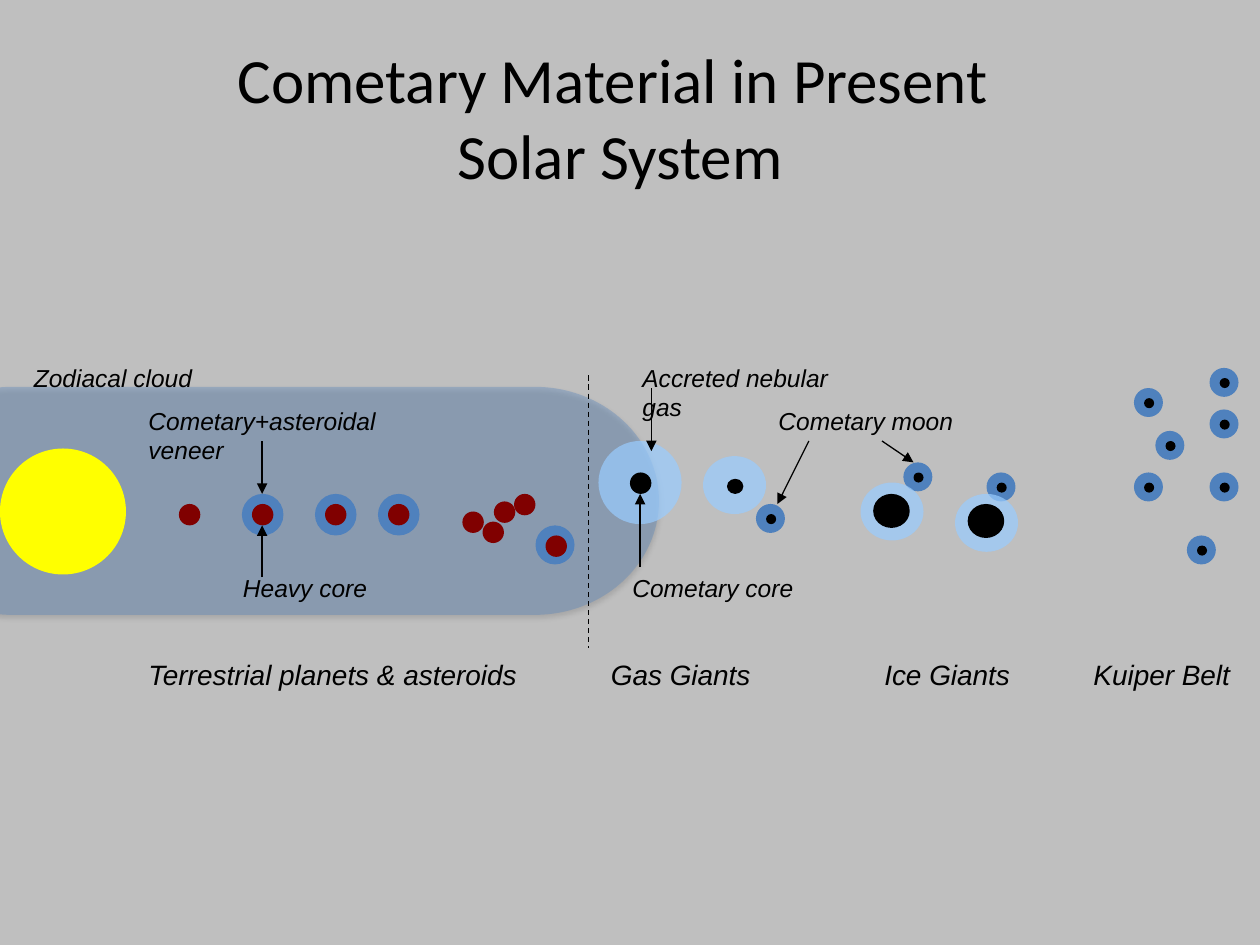
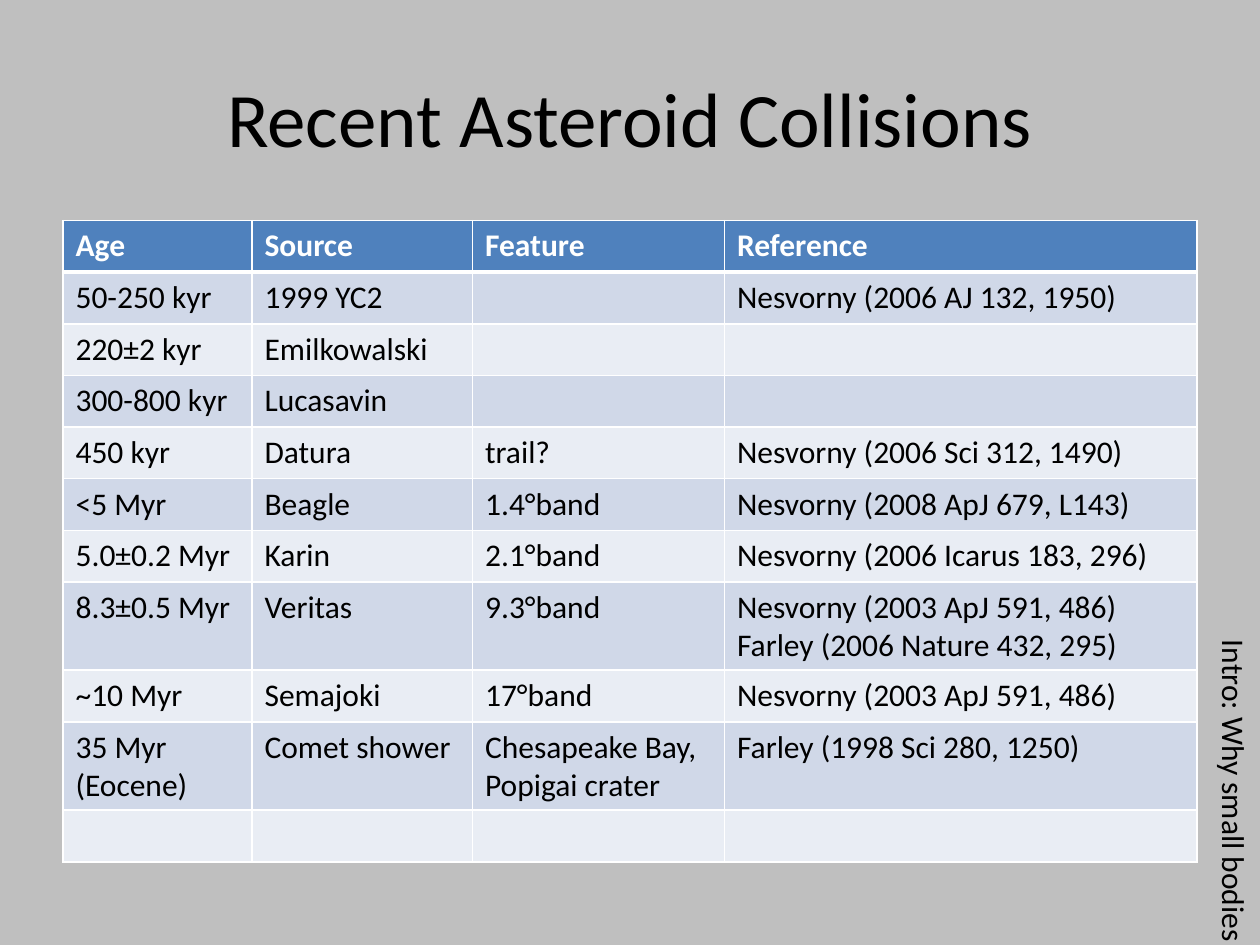
"""Build two slides on cometary material and recent asteroid collisions."""
import pptx
import pptx.util
import pptx.dml.color
import pptx.enum.dml
import pptx.enum.shapes
import pptx.enum.text
import pptx.oxml
import pptx.oxml.ns
from lxml import etree

Inches = pptx.util.Inches
Pt = pptx.util.Pt

BACKGROUND, BLACK, WHITE = "BFBFBF", "000000", "FFFFFF"
ICE, ROCK, GAS, SUN = "4F81BD", "800000", "99CCFF", "FFFF00"
BANDS = ("D0D8E8", "E9EDF4")
GAS_OPACITY, CLOUD_OPACITY = 71, 34

SYSTEM_TITLE = "Cometary Material in Present \vSolar System"
CLOUD = (-0.89, 3.07, 6.12, 1.81)
SUN_PLACE = (0, 3.56, 1, 1)
ROCK_SIZE = 0.17
BARE_ROCKS = [(1.42, 4), (3.67, 4.06), (3.83, 4.14), (3.92, 3.98), (4.08, 3.92)]
VENEERED = [(1.92, 3.92, 0.33), (2.5, 3.92, 0.33), (3, 3.92, 0.33), (4.25, 4.17, 0.31)]
MOON_SIZE, MOON_CORE = 0.23, 0.08
MOONS = [
    (9.6, 2.92), (9.6, 3.25), (9, 3.08), (9.6, 3.75), (7.83, 3.75),
    (9.17, 3.42), (7.17, 3.67), (6, 4), (9, 3.75), (9.42, 4.25),
]
GIANTS = [
    ((4.75, 3.5, 0.66, 0.66), (5, 3.75, 0.17, 0.17)),
    ((5.58, 3.62, 0.5, 0.46), (5.77, 3.8, 0.13, 0.12)),
    ((6.83, 3.83, 0.5, 0.46), (6.93, 3.92, 0.29, 0.27)),
    ((7.58, 3.92, 0.5, 0.46), (7.68, 4, 0.29, 0.27)),
]
SNOW_LINE = (4.67, 2.98, 4.67, 5.14)
ARROWS = [
    (5.17, 3.08, 5.17, 3.58),
    (5.08, 4.5, 5.08, 3.92),
    (2.08, 3.5, 2.08, 3.92),
    (2.08, 4.58, 2.08, 4.17),
    (6.42, 3.5, 6.17, 4),
    (7, 3.5, 7.25, 3.67),
]
CALLOUTS = [
    ("Zodiacal cloud", 0.17, 2.83),
    ("Cometary+asteroidal veneer", 1.08, 3.17),
    ("Heavy core", 1.83, 4.5),
    ("Accreted nebular gas", 5, 2.83),
    ("Cometary core", 4.92, 4.5),
    ("Cometary moon", 6.08, 3.17),
]
REGIONS = [
    ("Terrestrial planets & asteroids", 1.08, 3.25),
    ("Gas Giants", 4.75, 1.58),
    ("Ice Giants", 6.92, 1.58),
    ("Kuiper Belt", 8.58, 1.58),
]

COLLISION_TITLE = "Recent Asteroid Collisions"
SECTION = "Intro: Why small bodies"
COLUMN_WIDTHS = (1.5, 1.75, 2, 3.75)
ROW_HEIGHT = 0.41
COLLISIONS = [
    ("Age", "Source", "Feature", "Reference"),
    ("50-250 kyr", "1999 YC2", "", "Nesvorny (2006 AJ 132, 1950)"),
    ("220±2 kyr", "Emilkowalski", "", ""),
    ("300-800 kyr", "Lucasavin", "", ""),
    ("450 kyr", "Datura", "trail?", "Nesvorny (2006 Sci 312, 1490)"),
    ("<5 Myr", "Beagle", "1.4°band", "Nesvorny (2008 ApJ 679, L143)"),
    ("5.0±0.2 Myr", "Karin", "2.1°band", "Nesvorny (2006 Icarus 183, 296)"),
    ("8.3±0.5 Myr", "Veritas", "9.3°band",
     "Nesvorny (2003 ApJ 591, 486)\nFarley (2006 Nature 432, 295)"),
    ("~10 Myr", "Semajoki", "17°band", "Nesvorny (2003 ApJ 591, 486)"),
    ("35 Myr (Eocene)", "Comet shower", "Chesapeake Bay, Popigai crater",
     "Farley (1998 Sci 280, 1250)"),
    ("", "", "", ""),
]

TITLE_FONT = {"name": "Calibri"}
CALLOUT_FONT = {"name": "Arial", "size": Pt(14), "italic": True}
REGION_FONT = {"name": "Arial", "size": Pt(16), "italic": True}
BODY_FONT = {"name": "Calibri", "size": Pt(18), "bold": False}
HEADER_FONT = {**BODY_FONT, "bold": True}


def color(value):
    return pptx.dml.color.RGBColor.from_string(value)


def add_child(parent, tag, **attributes):
    return etree.SubElement(parent, pptx.oxml.ns.qn(tag), attributes)


def write(frame, text, font, ink=BLACK, align=None):
    frame.text = text
    for para in frame.paragraphs:
        para.alignment = align
        for span in para.runs:
            for name, value in font.items():
                setattr(span.font, name, value)
            span.font.color.rgb = color(ink)


def add_text(page, place, text, font, align=None, wrap=True):
    box = page.shapes.add_textbox(*map(Inches, place))
    box.text_frame.word_wrap = wrap
    write(box.text_frame, text, font, align=align)
    return box


def add_page(deck, title, left, size):
    page = deck.slides.add_slide(deck.slide_layouts[6])
    page.background.fill.solid()
    page.background.fill.fore_color.rgb = color(BACKGROUND)
    box = add_text(page, (left, 0.3, 9, 1.25), title, {**TITLE_FONT, "size": Pt(size)},
                   pptx.enum.text.PP_ALIGN.CENTER)
    box.text_frame.vertical_anchor = pptx.enum.text.MSO_ANCHOR.MIDDLE
    return page


def add_body(holder, place, fill, opacity=100, kind="OVAL"):
    preset = getattr(pptx.enum.shapes.MSO_SHAPE, kind)
    body = holder.shapes.add_shape(preset, *map(Inches, place))
    body.shadow.inherit = False
    body.line.fill.background()
    body.fill.solid()
    body.fill.fore_color.rgb = color(fill)
    if opacity < 100:
        tint = body.fill._xPr.find(".//" + pptx.oxml.ns.qn("a:srgbClr"))
        add_child(tint, "a:alpha", val=str(opacity * 1000))
    return body


def add_cored(page, shell, core, shell_fill, core_fill, opacity=100):
    group = page.shapes.add_group_shape()
    add_body(group, shell, shell_fill, opacity)
    add_body(group, core, core_fill)


def add_line(page, ends, dashed=False):
    line = page.shapes.add_connector(
        pptx.enum.shapes.MSO_CONNECTOR.STRAIGHT, *map(Inches, ends))
    line.line.color.rgb = color(BLACK)
    line.line.width = Pt(0.75)
    if dashed:
        line.line.dash_style = pptx.enum.dml.MSO_LINE.DASH
    else:
        add_child(line.line._get_or_add_ln(), "a:tailEnd", type="triangle")
    add_child(line._element.spPr, "a:effectLst")


def add_cloud(page):
    cloud = add_body(page, CLOUD, ICE, CLOUD_OPACITY, "FLOWCHART_TERMINATOR")
    effects = cloud._element.spPr.find(pptx.oxml.ns.qn("a:effectLst"))
    shadow = add_child(effects, "a:outerShdw", blurRad=str(Pt(3.1)), dist=str(Pt(1.8)),
                       dir="5400000", rotWithShape="0")
    add_child(add_child(shadow, "a:srgbClr", val=BLACK), "a:alpha", val="35000")


def add_border(cell, side, width):
    edge = add_child(cell._tc.get_or_add_tcPr(), "a:ln" + side, w=str(Pt(width)))
    add_child(add_child(edge, "a:solidFill"), "a:srgbClr", val=WHITE)


def build_system(deck):
    page = add_page(deck, SYSTEM_TITLE, 0.42, 36)
    add_cloud(page)
    add_body(page, SUN_PLACE, SUN)
    for left, top in BARE_ROCKS:
        add_body(page, (left, top, ROCK_SIZE, ROCK_SIZE), ROCK)
    for left, top, size in VENEERED:
        add_cored(page, (left, top, size, size),
                  (left + 0.08, top + 0.08, ROCK_SIZE, ROCK_SIZE), ICE, ROCK)
    for left, top in MOONS:
        add_cored(page, (left, top, MOON_SIZE, MOON_SIZE),
                  (left + 0.08, top + 0.08, MOON_CORE, MOON_CORE), ICE, BLACK)
    for shell, core in GIANTS:
        add_cored(page, shell, core, GAS, BLACK, GAS_OPACITY)
    add_line(page, SNOW_LINE, dashed=True)
    for ends in ARROWS:
        add_line(page, ends)
    for text, left, top in CALLOUTS:
        add_text(page, (left, top, 2.02, 0.33), text, CALLOUT_FONT)
    for text, left, width in REGIONS:
        add_text(page, (left, 5.17, width, 0.37), text, REGION_FONT)


def build_collisions(deck):
    page = add_page(deck, COLLISION_TITLE, 0.5, 44)
    place = (0.5, 1.75, sum(COLUMN_WIDTHS), ROW_HEIGHT * len(COLLISIONS))
    table = page.shapes.add_table(
        len(COLLISIONS), len(COLUMN_WIDTHS), *map(Inches, place)).table
    for column, width in zip(table.columns, COLUMN_WIDTHS):
        column.width = Inches(width)
    for index, (row, texts) in enumerate(zip(table.rows, COLLISIONS)):
        row.height = Inches(ROW_HEIGHT)
        header = index == 0
        widths = {"L": 1, "R": 1, "T": 3 if index == 1 else 1, "B": 3 if header else 1}
        for cell, text in zip(row.cells, texts):
            write(cell.text_frame, text, HEADER_FONT if header else BODY_FONT,
                  WHITE if header else BLACK)
            for side, width in widths.items():
                add_border(cell, side, width)
            cell.fill.solid()
            cell.fill.fore_color.rgb = color(ICE if header else BANDS[(index - 1) % 2])
    box = add_text(page, (9.5, 4.98, 0.5, 2.52), SECTION, BODY_FONT, wrap=False)
    box.text_frame._txBody.bodyPr.set("vert", "vert")


def main():
    deck = pptx.Presentation()
    deck.slide_width, deck.slide_height = Inches(10), Inches(7.5)
    build_system(deck)
    build_collisions(deck)
    deck.save("out.pptx")


if __name__ == "__main__":
    main()
